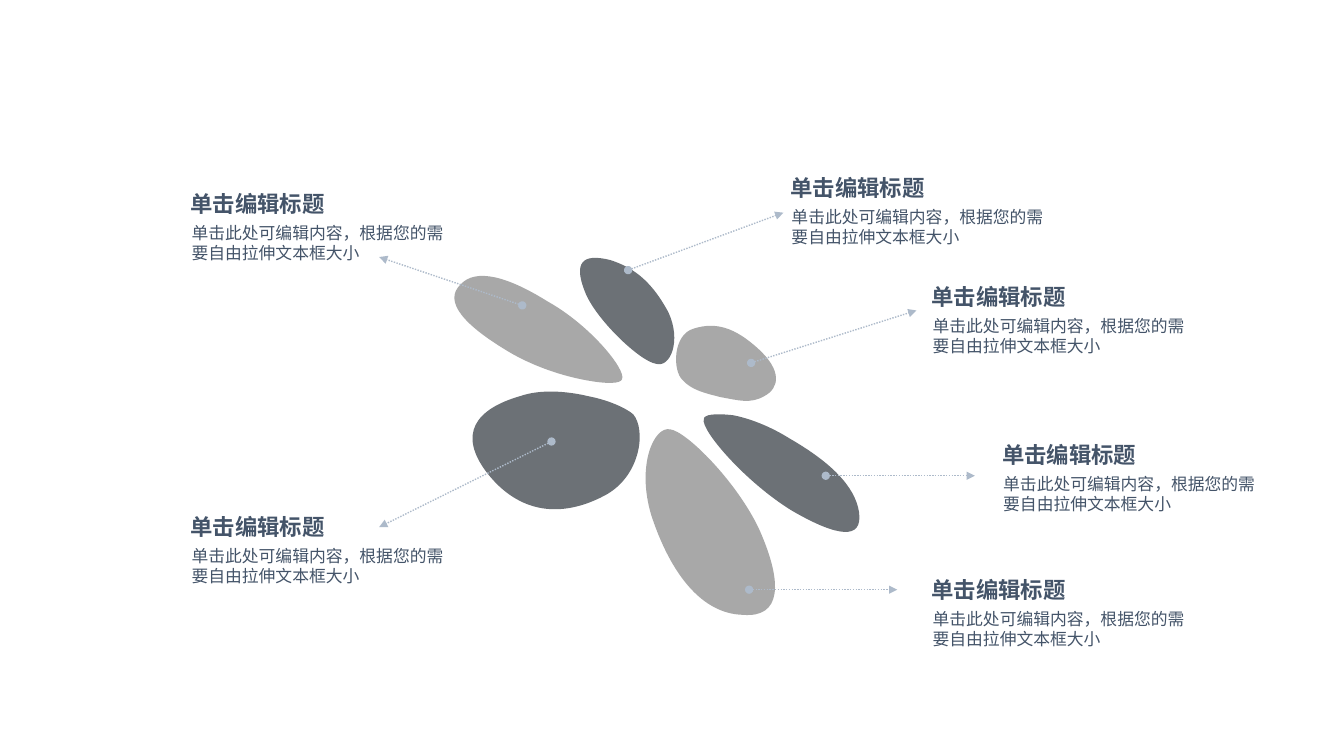
from dataclasses import dataclass

from lxml.etree import SubElement
from pptx import Presentation
from pptx.dml.color import RGBColor
from pptx.enum.dml import MSO_LINE
from pptx.enum.shapes import MSO_CONNECTOR
from pptx.enum.text import MSO_AUTO_SIZE
from pptx.oxml.ns import qn
from pptx.util import Inches, Pt


@dataclass(frozen=True)
class Theme:
    font: str = "Arial"
    title_size: int = 16
    body_size: int = 12
    line_width: int = 1
    text: str = "445469"
    line: str = "ADBACA"
    light: str = "A8A8A8"
    dark: str = "6C7176"


HEADING = "单击编辑标题"
DETAIL = "单击此处可编辑内容，根据您的需要自由拉伸文本框大小"
THEME = Theme()

# Petals: fill, start point, then three points for each Bézier curve
PETALS = [
    (THEME.light, (6.65, 4.26), [
        (6.49, 4.22), (6.31, 4.61), (6.46, 5.11),
        (6.65, 5.69), (6.96, 6.09), (7.37, 6.1),
        (7.75, 6.13), (7.77, 5.79), (7.53, 5.25),
        (7.31, 4.78), (6.81, 4.28), (6.65, 4.26)]),
    (THEME.dark, (6.98, 4.16), [
        (6.95, 4.27), (7.4, 4.79), (7.86, 5.07),
        (8.31, 5.33), (8.56, 5.36), (8.52, 5.08),
        (8.48, 4.82), (8.23, 4.58), (7.83, 4.35),
        (7.64, 4.23), (7.43, 4.15), (7.27, 4.12),
        (7.1, 4.1), (6.98, 4.11), (6.98, 4.16)]),
    (THEME.dark, (6.51, 3.61), [
        (6.65, 3.65), (6.76, 3.38), (6.63, 3.1),
        (6.48, 2.82), (6.31, 2.66), (6.05, 2.58),
        (5.77, 2.51), (5.69, 2.61), (5.8, 2.89),
        (5.9, 3.16), (6.35, 3.59), (6.51, 3.61)]),
    (THEME.light, (6.17, 3.76), [
        (6.21, 3.67), (5.86, 3.23), (5.43, 2.99),
        (5.03, 2.74), (4.72, 2.66), (4.57, 2.82),
        (4.39, 2.99), (4.6, 3.23), (5.08, 3.51),
        (5.33, 3.65), (5.59, 3.73), (5.8, 3.77),
        (6.01, 3.81), (6.16, 3.81), (6.17, 3.76)]),
    (THEME.light, (6.77, 3.77), [
        (6.86, 3.87), (6.99, 3.9), (7.15, 3.94),
        (7.32, 3.97), (7.44, 4.01), (7.58, 3.93),
        (7.73, 3.85), (7.76, 3.68), (7.52, 3.46),
        (7.29, 3.25), (7.1, 3.19), (6.88, 3.26),
        (6.67, 3.32), (6.67, 3.68), (6.77, 3.77)]),
    (THEME.dark, (6.28, 4.11), [
        (6.21, 4.05), (6.04, 3.97), (5.83, 3.93),
        (5.62, 3.88), (5.36, 3.86), (5.16, 3.93),
        (4.71, 4.06), (4.54, 4.31), (4.83, 4.69),
        (5.15, 5.1), (5.57, 5.14), (5.99, 4.92),
        (6.36, 4.73), (6.41, 4.26), (6.28, 4.11)]),
]

# Callouts: arrow start, arrow end, top left of the text
CALLOUTS = [
    ((7.45, 3.6), (9.09, 3.08), (9.24, 2.81)),
    ((6.23, 2.68), (7.77, 2.11), (7.84, 1.73)),
    ((5.18, 3.03), (3.76, 2.55), (1.89, 1.89)),
    ((5.47, 4.38), (3.76, 5.23), (1.89, 5.09)),
    ((7.43, 5.85), (8.9, 5.85), (9.24, 5.72)),
    ((8.19, 4.72), (9.67, 4.72), (9.94, 4.38)),
]


class SlideBuilder:
    def __init__(self, slide, theme):
        self.slide = slide
        self.theme = theme

    def petal(self, color, start, points):
        builder = self.slide.shapes.build_freeform(*map(Inches, start))
        builder.add_line_segments([(Inches(x), Inches(y)) for x, y in points])
        shape = builder.convert_to_shape()
        shape.shadow.inherit = False
        shape.fill.solid()
        shape.fill.fore_color.rgb = RGBColor.from_string(color)
        shape.line.fill.background()
        # Join each three straight segments into one cubic curve
        segments = list(shape.element.iter(qn("a:lnTo")))
        for first in range(0, len(segments), 3):
            curve = segments[first].getparent().makeelement(qn("a:cubicBezTo"))
            segments[first].addprevious(curve)
            for segment in segments[first:first + 3]:
                curve.append(segment[0])
                segment.getparent().remove(segment)

    def arrow(self, start, end):
        connector = self.slide.shapes.add_connector(
            MSO_CONNECTOR.STRAIGHT, *map(Inches, start + end))
        line = connector.line
        line.color.rgb = RGBColor.from_string(self.theme.line)
        line.width = Pt(self.theme.line_width)
        line.dash_style = MSO_LINE.ROUND_DOT
        properties = connector.element.spPr
        outline = properties.find(qn("a:ln"))
        SubElement(outline, qn("a:headEnd"), type="oval")
        SubElement(outline, qn("a:tailEnd"), type="triangle")
        SubElement(properties, qn("a:effectLst"))

    def text(self, content, left, top, width, height, size, bold=False):
        box = self.slide.shapes.add_textbox(*map(Inches, (left, top, width, height)))
        frame = box.text_frame
        frame.word_wrap = True
        frame.auto_size = MSO_AUTO_SIZE.SHAPE_TO_FIT_TEXT
        frame.margin_left = frame.margin_right = 0
        frame.margin_top = frame.margin_bottom = 0
        paragraph = frame.paragraphs[0]
        paragraph.text = content
        font = paragraph.font
        font.name = self.theme.font
        font.size = Pt(size)
        font.bold = bold
        font.color.rgb = RGBColor.from_string(self.theme.text)

    def callout(self, start, end, corner):
        left, top = corner
        self.arrow(start, end)
        self.text(HEADING, left, top, 1.4, 0.27, self.theme.title_size, bold=True)
        self.text(DETAIL, left + 0.01, top + 0.32, 2.55, 0.4, self.theme.body_size)


def main():
    presentation = Presentation()
    presentation.slide_width = Inches(13.33)
    presentation.slide_height = Inches(7.5)
    blank_layout = presentation.slide_layouts[6]
    builder = SlideBuilder(presentation.slides.add_slide(blank_layout), THEME)

    # Petals first, so that the arrows lie on top
    for petal in PETALS:
        builder.petal(*petal)
    for callout in CALLOUTS:
        builder.callout(*callout)

    presentation.save("out.pptx")


if __name__ == "__main__":
    main()
